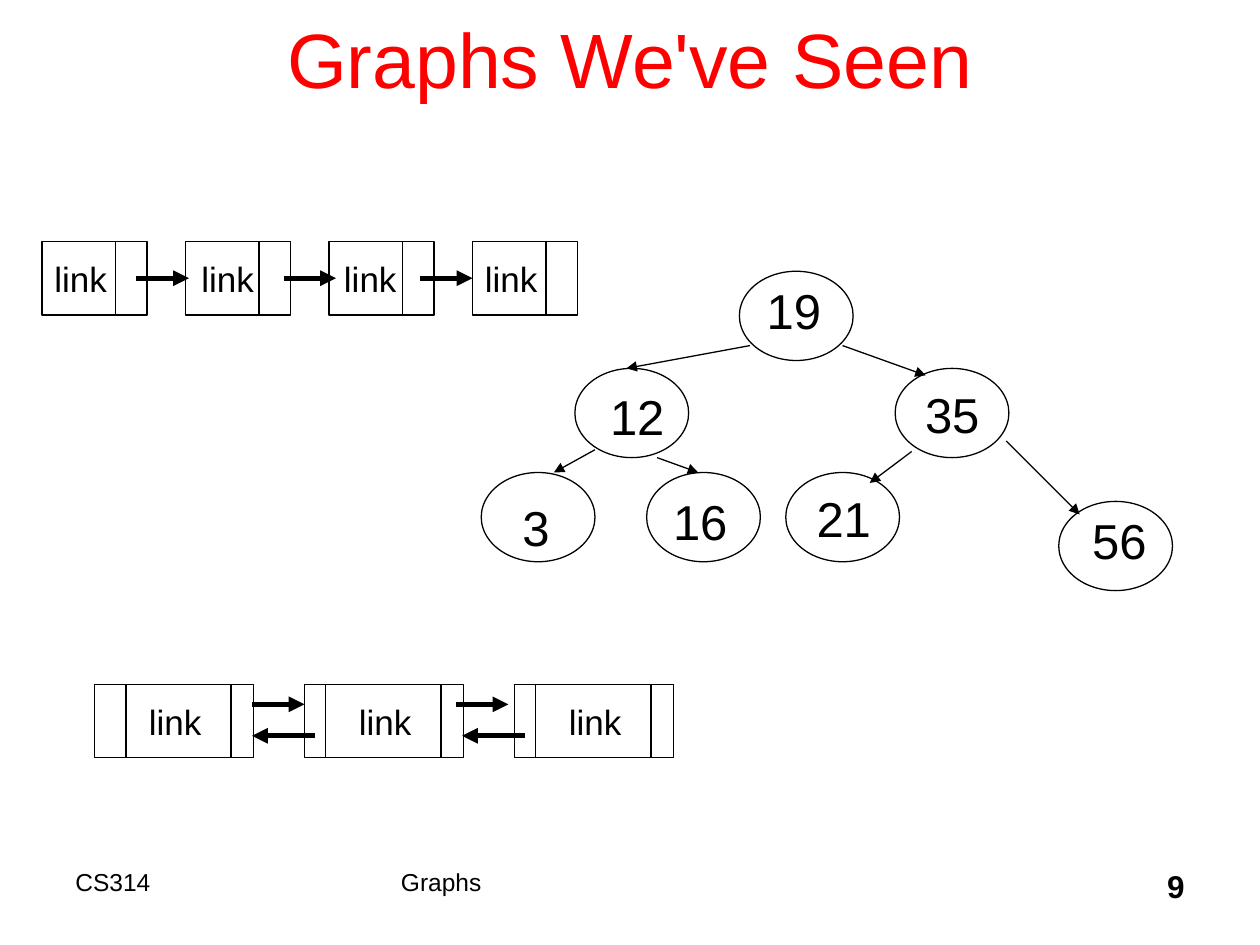
from lxml.etree import SubElement
from pptx import Presentation
from pptx.dml.color import RGBColor
from pptx.enum.shapes import MSO_CONNECTOR, MSO_SHAPE
from pptx.enum.text import MSO_ANCHOR, MSO_AUTO_SIZE, PP_ALIGN
from pptx.oxml.ns import qn
from pptx.util import Pt

BLACK = RGBColor(0, 0, 0)
RED = RGBColor(255, 0, 0)

prs = Presentation()
prs.slide_width, prs.slide_height = Pt(720), Pt(540)
s = prs.slides.add_slide(prs.slide_layouts[6])


def text(txt, x, y, w, h, label=False, align=PP_ALIGN.LEFT,
         anchor=MSO_ANCHOR.TOP, **font):
    tf = s.shapes.add_textbox(Pt(x), Pt(y), Pt(w), Pt(h)).text_frame
    frame = {"word_wrap": not label, "vertical_anchor": anchor,
             "auto_size": MSO_AUTO_SIZE.SHAPE_TO_FIT_TEXT if label else MSO_AUTO_SIZE.NONE}
    for key, value in frame.items():
        setattr(tf, key, value)
    p = tf.paragraphs[0]
    p.alignment = align
    if label:
        before = SubElement(p._p.get_or_add_pPr(), qn("a:spcBef"))
        SubElement(before, qn("a:spcPct"), val="20000")
    r = p.add_run()
    r.text = txt
    color = font.pop("color", BLACK)
    for key, value in {"name": "Arial", **font}.items():
        setattr(r.font, key, value)
    r.font.color.rgb = color


def line(x1, y1, x2, y2, width=0.75, arrow=True):
    c = s.shapes.add_connector(MSO_CONNECTOR.STRAIGHT, Pt(x1), Pt(y1), Pt(x2), Pt(y2))
    c.line.width = Pt(width)
    c.line.color.rgb = BLACK
    if arrow:
        SubElement(c.line._get_or_add_ln(), qn("a:tailEnd"), type="triangle")
    SubElement(c._element.spPr, qn("a:effectLst"))


text("Graphs We've Seen", 54, -12, 612, 90, align=PP_ALIGN.CENTER,
     anchor=MSO_ANCHOR.MIDDLE, size=Pt(44), color=RED)
text("CS314", 36, 492, 180, 36, size=Pt(14))
text("Graphs", 222, 492, 276, 36, size=Pt(14))
text("9", 534, 492, 150, 36, align=PP_ALIGN.RIGHT, size=Pt(18), bold=True)

outlines = []
labels = []

for i, label_x in enumerate((24, 108, 189.5, 270)):
    x = 24 + 82 * i
    outlines.append((MSO_SHAPE.RECTANGLE, x, 138, 60, 42))
    line(x + 42, 138, x + 42, 180, arrow=False)
    labels.append(("link", label_x, 143.5, 44.5, 31, 20))
for x in (78, 162, 240):
    line(x, 159, x + 30, 159, 3)

for i, left_cell in enumerate((18, 12, 12)):
    x = 54 + 120 * i
    outlines.append((MSO_SHAPE.RECTANGLE, x, 391, 91, 42))
    for cell in (left_cell, 78):
        line(x + cell, 391, x + cell, 433, arrow=False)
    labels.append(("link", x + 24, 396.5, 44.5, 31, 20))
for x in (144, 260.5):
    line(x, 402.5, x + 30, 402.5, 3)
for x in (180, 300):
    line(x, 420.5, x - 36, 420.5, 3)

nodes = [("19", 422.5, 155, 431, 157), ("12", 328.5, 210.5, 341.5, 217.5),
         ("35", 511.5, 210.5, 521.5, 216), ("3", 275, 270, 291.5, 281),
         ("16", 369.5, 270, 377.5, 277.5), ("21", 449, 270, 459.5, 275.5),
         ("56", 605, 286.5, 617, 288)]
for txt, x, y, label_x, label_y in nodes:
    outlines.append((MSO_SHAPE.OVAL, x, y, 65, 51))
    labels.append((txt, label_x, label_y, 46 if len(txt) > 1 else 30, 41, 28))

for shape, x, y, w, h in outlines:
    sp = s.shapes.add_shape(shape, Pt(x), Pt(y), Pt(w), Pt(h))
    sp.shadow.inherit = False
    sp.fill.background()
    sp.line.width = Pt(0.75)
    sp.line.color.rgb = BLACK
for txt, x, y, w, h, size in labels:
    text(txt, x, y, w, h, label=True, size=Pt(size))

edges = [(428.5, 197.5, 358, 210.5), (481.5, 197.5, 529, 214.5),
         (340, 257, 316.5, 270), (375.5, 261.5, 399, 270),
         (521, 258, 497, 276), (575, 252, 617, 294)]
for edge in edges:
    line(*edge)

prs.save("out.pptx")
